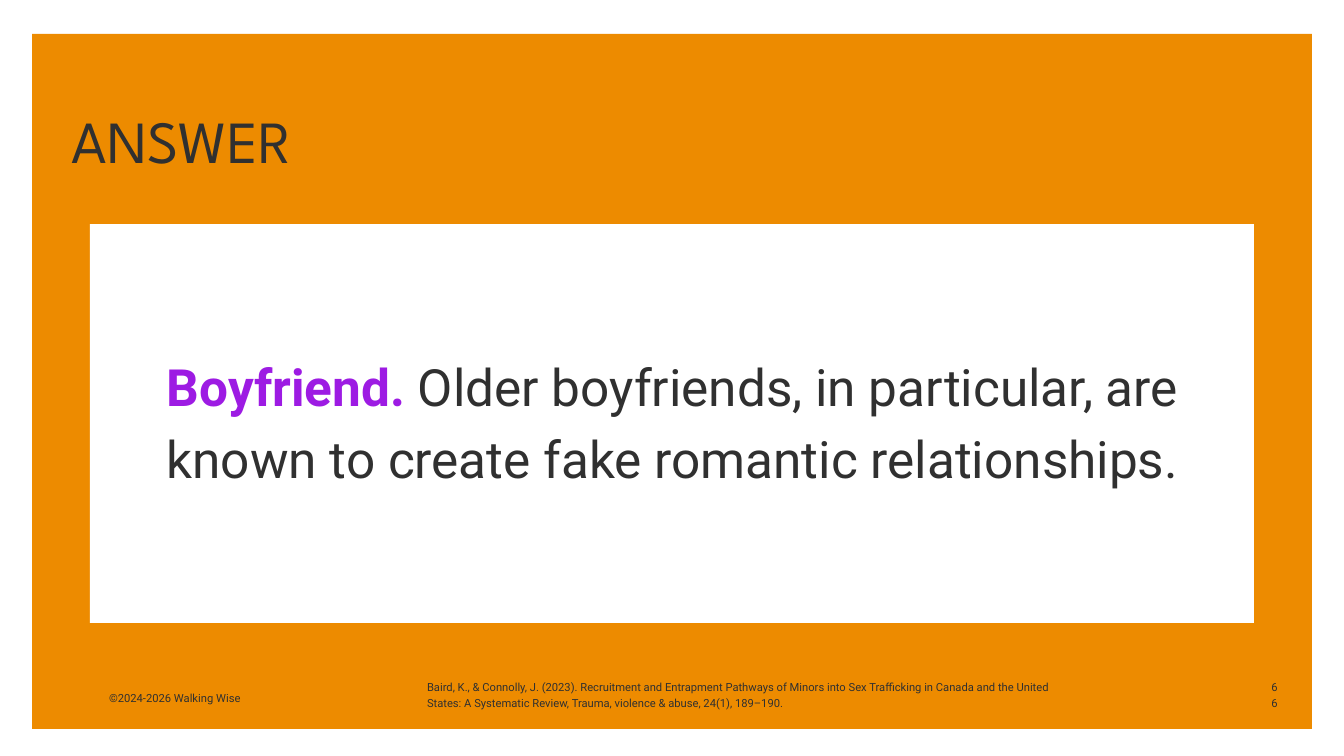
"""Build the quiz answer slide: an orange frame, a white card and footer notes."""
from lxml import etree
from pptx import Presentation
from pptx import util as u
from pptx.dml.color import RGBColor
from pptx.enum import shapes, text
from pptx.oxml.ns import qn

PX = 914400 / 67.2
HUES = {"frame": "ED8B00", "card": "FFFFFF", "ink": "303030", "key": "9D1BE3"}
LEFT, MID = text.PP_ALIGN.LEFT, text.PP_ALIGN.CENTER

PANELS = [("frame", (32, 34, 1280, 695)), ("card", (90, 224, 1164, 399))]
TITLE = {"at": (72, 92, 672, 81), "font": "League Spartan", "size": 64,
         "lead": 89.6, "align": LEFT, "runs": [("ANSWER", "ink", False)]}
BODY = {"at": (163, 345, 1019, 140), "font": "Roboto", "size": 55,
        "lead": 77, "align": MID, "runs": [
            ("Boyfriend. ", "key", True),
            ("Older boyfriends, in particular, are known to create fake "
             "romantic relationships.", "ink", False)]}
NOTES = [
    ((1269, 678, 11, 13), MID, "66"),
    ((109, 689, 173, 15), LEFT, "©2024-2026 Walking Wise"),
    ((427, 678, 646, 31), LEFT,
     "Baird, K., & Connolly, J. (2023). Recruitment and Entrapment Pathways of "
     "Minors into Sex Trafficking in Canada and the United States: A Systematic "
     "Review, Trauma, violence & abuse, 24(1), 189–190."),
]


def emu(box):
    return [round(n * PX) for n in box]


def tint(name):
    return RGBColor.from_string(HUES[name])


def write(shape, part):
    shape.left, shape.top, shape.width, shape.height = emu(part["at"])
    frame = shape.text_frame
    frame.word_wrap = True
    frame.auto_size = text.MSO_AUTO_SIZE.NONE
    frame.vertical_anchor = text.MSO_ANCHOR.TOP
    frame.margin_left = frame.margin_top = 0
    frame.margin_right = frame.margin_bottom = 0
    para = frame.paragraphs[0]
    props = para._p.get_or_add_pPr()
    props.set("marL", "0")
    props.set("indent", "0")
    etree.SubElement(props, qn("a:buNone"))
    para.alignment = part["align"]
    para.line_spacing = u.Pt(part["lead"])
    para.space_before = u.Pt(0)
    for words, hue, bold in part["runs"]:
        run = para.add_run()
        run.text = words
        run.font.name = part["font"]
        run.font.size = u.Pt(part["size"])
        run.font.bold = bold
        run.font.color.rgb = tint(hue)


def main():
    deck = Presentation()
    deck.slide_width, deck.slide_height = emu((1344, 756))
    slide = deck.slides.add_slide(deck.slide_layouts[1])
    title, body = slide.placeholders
    tree = slide.shapes

    for hue, box in PANELS:
        panel = tree.add_shape(shapes.MSO_SHAPE.RECTANGLE, *emu(box))
        panel.shadow.inherit = False
        panel.fill.solid()
        panel.fill.fore_color.rgb = tint(hue)
        panel.line.fill.background()

    for box, align, words in NOTES:
        write(tree.add_textbox(*emu(box)), {
            "at": box, "font": "Roboto", "size": 12, "lead": 16.8,
            "align": align, "runs": [(words, "ink", False)]})

    for holder, part in ((title, TITLE), (body, BODY)):
        holder.element.getparent().append(holder.element)
        write(holder, part)

    deck.save("out.pptx")


if __name__ == "__main__":
    main()
